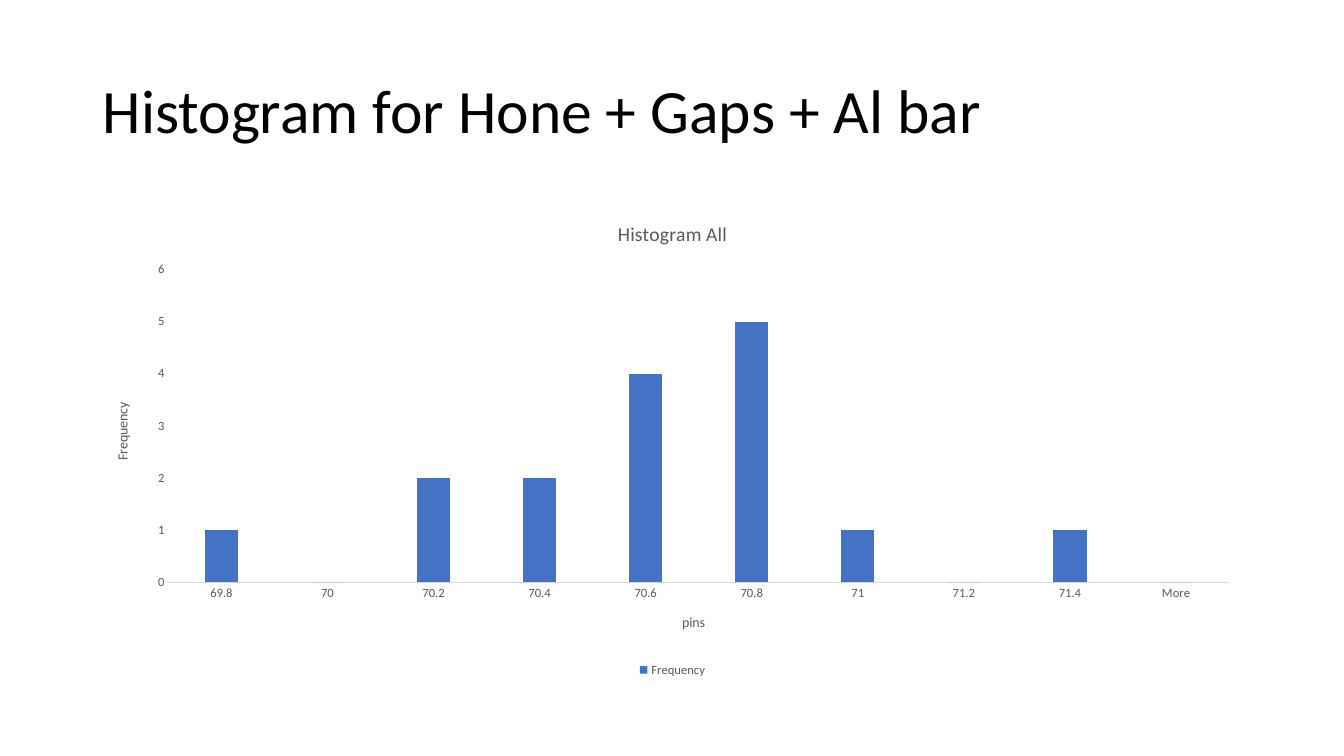
from pptx import Presentation
from pptx import util as u
from pptx.chart.data import CategoryChartData
from pptx.dml.color import RGBColor
from pptx.enum import chart as ch, text

COLORS = {"ink": "000000", "label": "595959", "rule": "D9D9D9", "bar": "4472C4"}
BINS = ["69.8", "70", "70.2", "70.4", "70.6", "70.8", "71", "71.2", "71.4", "More"]
COUNTS = [1, 0, 2, 2, 4, 5, 1, 0, 1, 0]


def apply(target, formats):
    for name, value in formats.items():
        setattr(target, name, value)


class SlideBuilder:
    typeface = "Calibri"

    def __init__(self, slide):
        self.slide = slide

    def color(self, key):
        return RGBColor.from_string(COLORS[key])

    def style(self, font, size, key):
        apply(font, {"name": self.typeface, "size": u.Pt(size), "bold": False})
        font.color.rgb = self.color(key)

    def heading(self, wording, box):
        frame = self.slide.shapes.add_textbox(*map(u.Inches, box)).text_frame
        apply(frame, {"word_wrap": True, "vertical_anchor": text.MSO_ANCHOR.MIDDLE})
        line = frame.paragraphs[0]
        line.line_spacing = 0.9
        run = line.add_run()
        run.text = wording
        self.style(run.font, 44, "ink")

    def caption(self, owner, wording, size):
        frame = owner.text_frame
        frame.text = wording
        self.style(frame.paragraphs[0].runs[0].font, size, "label")

    def axis(self, axis, wording, formats):
        apply(axis, {
            "has_major_gridlines": False,
            "major_tick_mark": ch.XL_TICK_MARK.NONE,
            "minor_tick_mark": ch.XL_TICK_MARK.NONE,
            **formats,
        })
        self.style(axis.tick_labels.font, 9, "label")
        self.caption(axis.axis_title, wording, 10)

    def histogram(self, wording, box):
        table = CategoryChartData()
        table.categories = BINS
        table.add_series("Frequency", COUNTS)
        histogram = self.slide.shapes.add_chart(
            ch.XL_CHART_TYPE.COLUMN_CLUSTERED, *map(u.Inches, box), table
        ).chart
        self.style(histogram.font, 10, "ink")
        self.caption(histogram.chart_title, wording, 14)
        histogram.chart_title.include_in_layout = False

        bars = histogram.plots[0]
        apply(bars, {"gap_width": 219, "overlap": -27, "vary_by_categories": False})
        fill = bars.series[0].format.fill
        fill.solid()
        fill.fore_color.rgb = self.color("bar")

        pins, frequency = histogram.category_axis, histogram.value_axis
        self.axis(pins, "pins", {})
        pins.format.line.color.rgb = self.color("rule")
        pins.format.line.width = u.Pt(0.75)
        self.axis(frequency, "Frequency",
                  {"minimum_scale": 0, "maximum_scale": 6, "major_unit": 1})
        frequency.format.line.fill.background()

        histogram.has_legend = True
        apply(histogram.legend, {
            "position": ch.XL_LEGEND_POSITION.BOTTOM,
            "include_in_layout": False,
        })
        self.style(histogram.legend.font, 9, "label")


def main():
    deck = Presentation()
    apply(deck, {"slide_width": u.Inches(13.33), "slide_height": u.Inches(7.5)})
    builder = SlideBuilder(deck.slides.add_slide(deck.slide_layouts[6]))
    builder.heading("Histogram for Hone + Gaps + Al bar", (0.92, 0.4, 11.5, 1.45))
    builder.histogram("Histogram All", (0.92, 2, 11.5, 4.76))
    deck.save("out.pptx")


if __name__ == "__main__":
    main()
